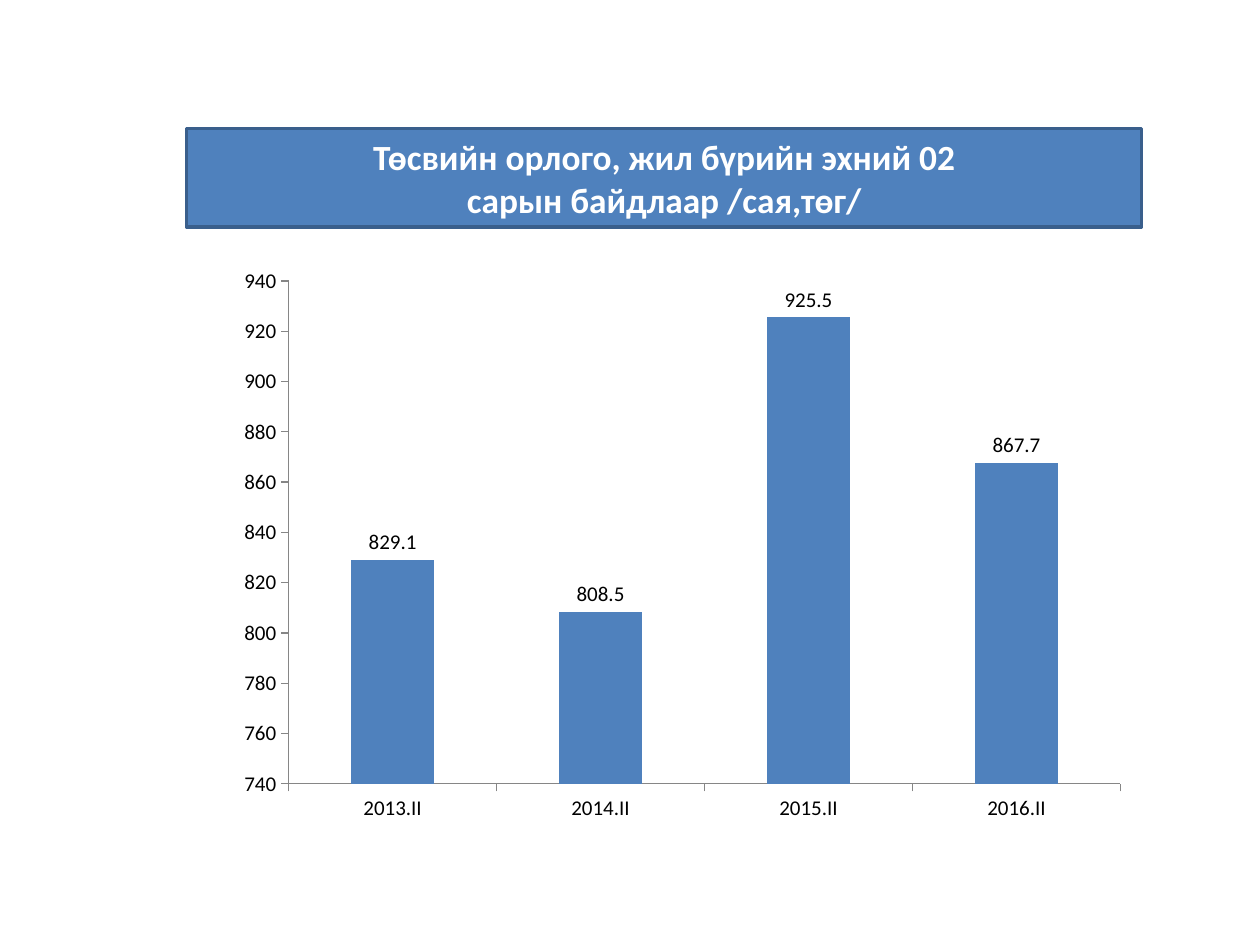
import lxml.etree
import pptx
import pptx.chart.data
import pptx.dml.color
import pptx.enum.chart
import pptx.enum.text
import pptx.oxml
import pptx.oxml.ns
import pptx.util

WIDTH, HEIGHT = 10, 7.5
FONT = "Calibri"
BLUE, DARK_BLUE, GREY = "4F81BD", "3A5F8C", "868686"
TITLE_LINES = ["Төсвийн орлого, жил бүрийн эхний 02", "сарын байдлаар /сая,төг/"]
REVENUE = {"2013.II": 829.1, "2014.II": 808.5, "2015.II": 925.5, "2016.II": 867.7}
LEFT, CONTENT_WIDTH = 0.148 * WIDTH, 0.758 * WIDTH
TITLE_BOX = (LEFT, 0.136 * HEIGHT, CONTENT_WIDTH, 0.104 * HEIGHT)
CHART_BOX = (LEFT, 0.26 * HEIGHT, CONTENT_WIDTH, 0.667 * HEIGHT)
PLOT_SHARES = {"x": 0.107, "y": 0.056, "w": 0.871, "h": 0.798}


def color(value):
    return pptx.dml.color.RGBColor.from_string(value)


def paint(fill, value):
    fill.solid()
    fill.fore_color.rgb = color(value)


def format_font(font, size, value, bold=False):
    font.name = FONT
    font.size = pptx.util.Pt(size)
    font.bold = bold
    font.color.rgb = color(value)


def write_text(text_frame, lines, size=12, value="000000", bold=False,
               align=pptx.enum.text.PP_ALIGN.CENTER):
    text_frame.text = "\n".join(lines)
    for paragraph in text_frame.paragraphs:
        paragraph.alignment = align
        paragraph.space_before = pptx.util.Pt(0)
        for run in paragraph.runs:
            format_font(run.font, size, value, bold)


def add_title(slide, box):
    title = slide.shapes.title
    title.left, title.top, title.width, title.height = map(pptx.util.Inches, box)
    paint(title.fill, BLUE)
    paint(title.line.fill, DARK_BLUE)
    title.line.width = pptx.util.Pt(2)
    text_frame = title.text_frame
    text_frame.word_wrap = True
    text_frame.auto_size = pptx.enum.text.MSO_AUTO_SIZE.NONE
    text_frame.vertical_anchor = pptx.enum.text.MSO_ANCHOR.MIDDLE
    write_text(text_frame, TITLE_LINES, size=20.2, value="FFFFFF", bold=True)


def place_plot(chart, shares):
    plot_area = chart.plots[0]._element.getparent()
    for old_layout in plot_area.findall(pptx.oxml.ns.qn("c:layout")):
        plot_area.remove(old_layout)
    layout = lxml.etree.Element(pptx.oxml.ns.qn("c:layout"))
    manual = lxml.etree.SubElement(layout, pptx.oxml.ns.qn("c:manualLayout"))
    settings = {"layoutTarget": "inner", "xMode": "edge", "yMode": "edge", **shares}
    for name, value in settings.items():
        lxml.etree.SubElement(manual, pptx.oxml.ns.qn(f"c:{name}"), val=str(value))
    plot_area.insert(0, layout)


def format_axis(axis):
    axis.has_major_gridlines = False
    axis.major_tick_mark = pptx.enum.chart.XL_TICK_MARK.OUTSIDE
    axis.minor_tick_mark = pptx.enum.chart.XL_TICK_MARK.NONE
    paint(axis.format.line.fill, GREY)
    axis.format.line.width = pptx.util.Pt(0.75)


def add_revenue_chart(slide, box):
    data = pptx.chart.data.CategoryChartData(number_format="0.0")
    data.categories = list(REVENUE)
    data.add_series("Series 1", list(REVENUE.values()))
    chart = slide.shapes.add_chart(
        pptx.enum.chart.XL_CHART_TYPE.COLUMN_CLUSTERED,
        *map(pptx.util.Inches, box), data).chart
    chart.has_title = False
    chart.has_legend = False
    format_font(chart.font, 12, "000000")
    for axis in (chart.category_axis, chart.value_axis):
        format_axis(axis)
    value_axis = chart.value_axis
    value_axis.minimum_scale, value_axis.maximum_scale = 740, 940
    value_axis.major_unit = 20
    value_axis.tick_labels.number_format = "0"
    value_axis.tick_labels.number_format_is_linked = False
    plot = chart.plots[0]
    plot.gap_width = 150
    plot.vary_by_categories = False
    paint(plot.series[0].format.fill, BLUE)
    labels = plot.series[0].data_labels
    labels.show_value = True
    labels.position = pptx.enum.chart.XL_LABEL_POSITION.OUTSIDE_END
    format_font(labels.font, 12, "000000")
    place_plot(chart, PLOT_SHARES)


def main():
    presentation = pptx.Presentation()
    presentation.slide_width = pptx.util.Inches(WIDTH)
    presentation.slide_height = pptx.util.Inches(HEIGHT)
    slide = presentation.slides.add_slide(presentation.slide_layouts[5])
    paint(slide.background.fill, "FFFFFF")
    add_title(slide, TITLE_BOX)
    add_revenue_chart(slide, CHART_BOX)
    presentation.save("out.pptx")


if __name__ == "__main__":
    main()
